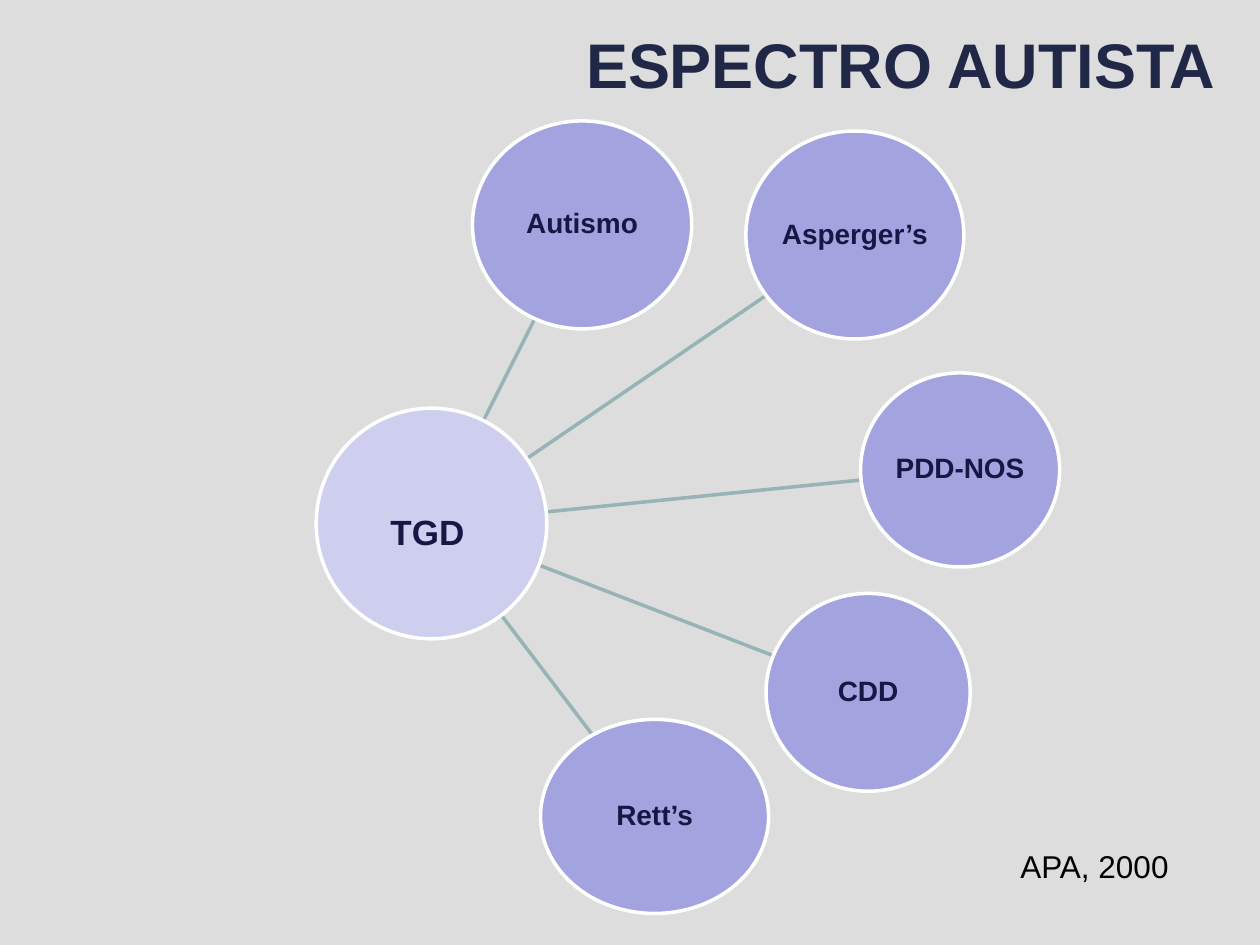
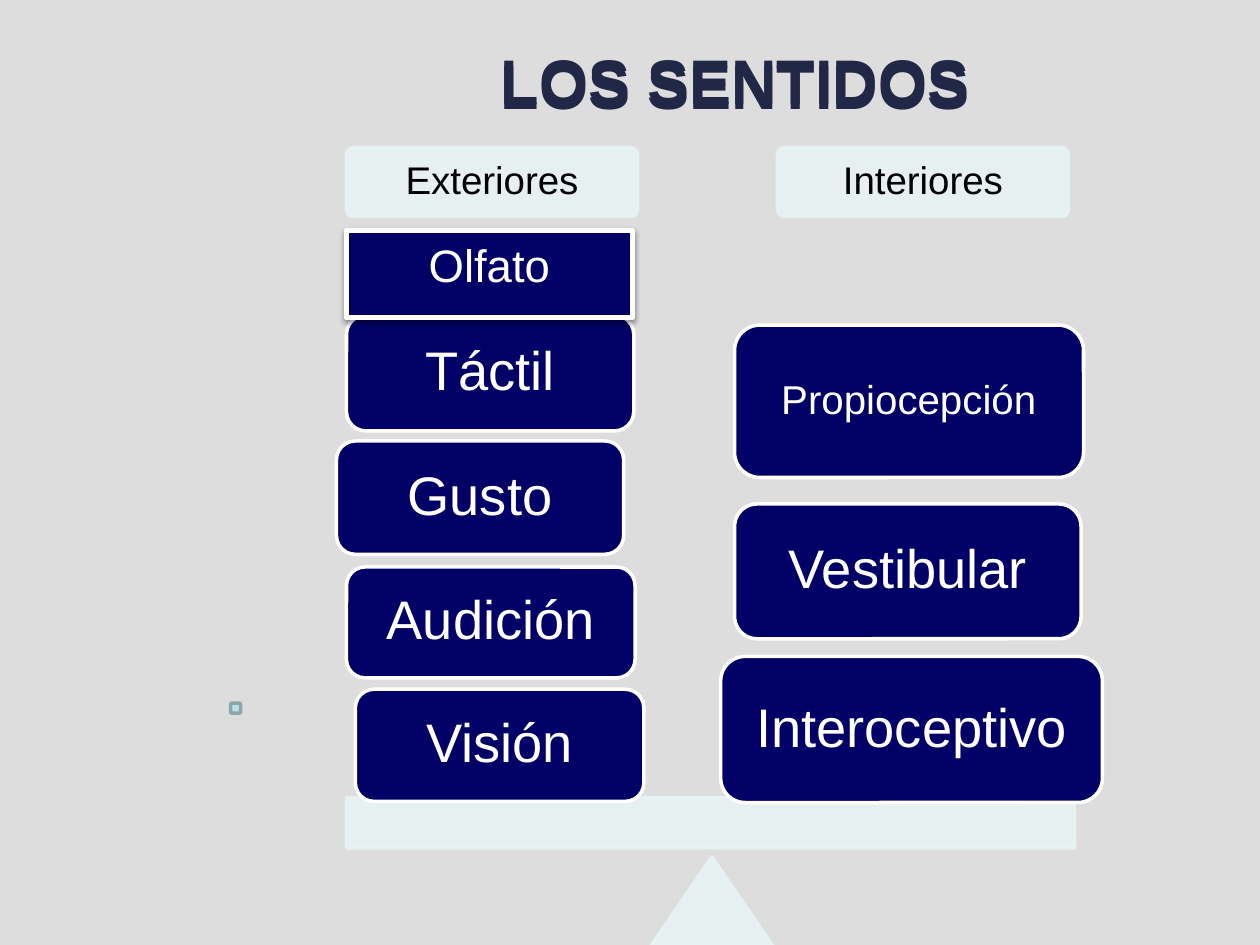
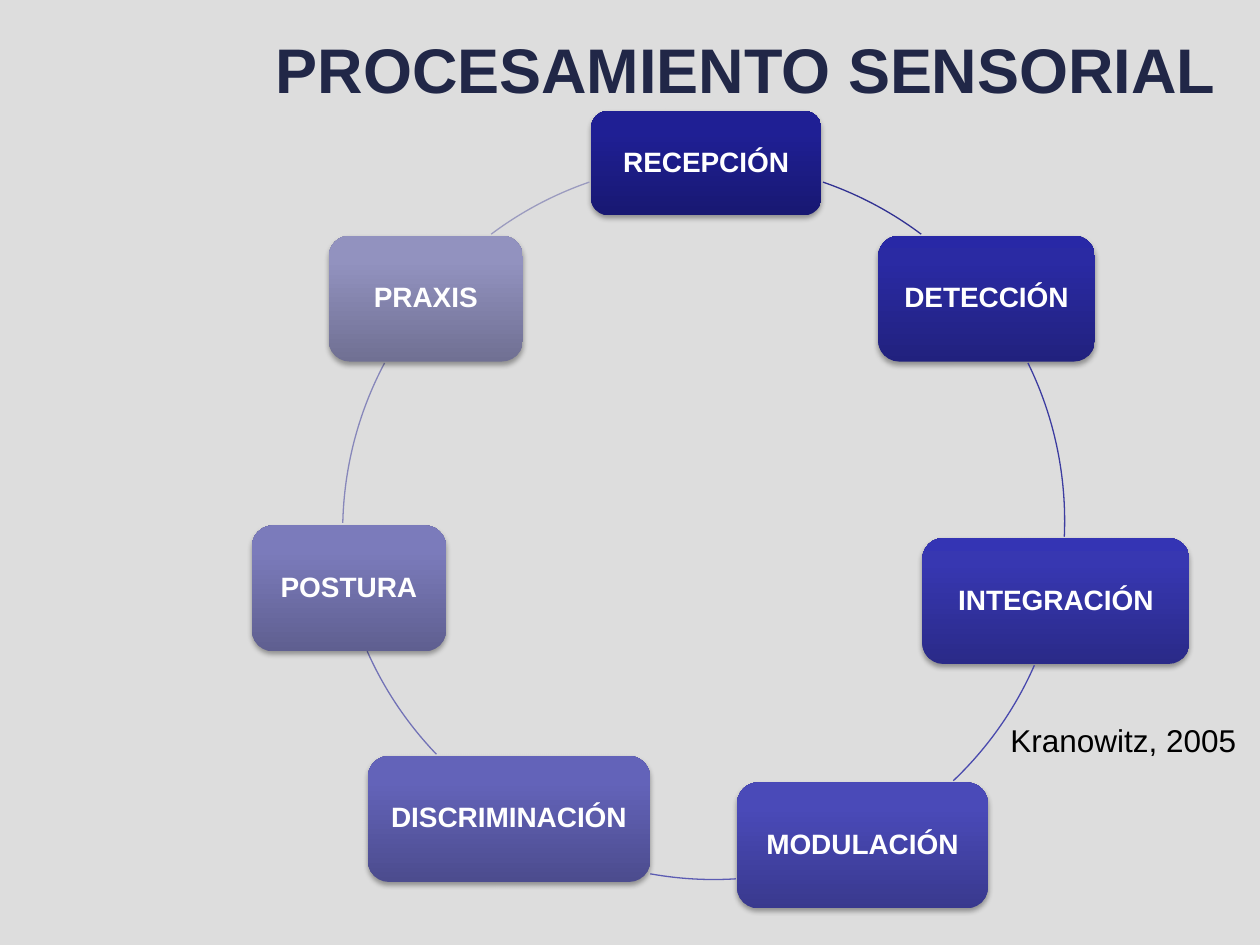
from math import atan2, degrees, hypot

from pptx import Presentation
from pptx.dml.color import RGBColor
from pptx.enum.shapes import MSO_CONNECTOR, MSO_SHAPE
from pptx.enum.text import MSO_ANCHOR, PP_ALIGN
from pptx.oxml import parse_xml
from pptx.oxml.ns import nsdecls
from pptx.util import Inches, Pt

OVAL, RECT, ROUND = MSO_SHAPE.OVAL, MSO_SHAPE.RECTANGLE, MSO_SHAPE.ROUNDED_RECTANGLE
TRIANGLE, ARC = MSO_SHAPE.ISOSCELES_TRIANGLE, MSO_SHAPE.ARC
LEFT, CENTER, RIGHT = PP_ALIGN.LEFT, PP_ALIGN.CENTER, PP_ALIGN.RIGHT
TOP, MIDDLE = MSO_ANCHOR.TOP, MSO_ANCHOR.MIDDLE

FONT = "Arial"
COLORS = {
    "ground": "DDDDDD", "title": "212747", "black": "000000", "white": "FFFFFF",
    "label": "171745", "hub": "CECEEF", "node": "A3A3E0", "spoke": "96B3B6",
    "pale": "E7F3F4", "navy": "000066", "dot": "BBE0E3", "dot_edge": "8AA6A8",
}

# Slide 1: (label, left, top, width, height)
HUB = (2.51, 3.24, 1.83, 1.83)
SPECTRUM = [
    ("Autismo", 3.75, 0.96, 1.74, 1.65),
    ("Asperger’s", 5.92, 1.04, 1.73, 1.65),
    ("PDD-NOS", 6.83, 2.96, 1.58, 1.54),
    ("CDD", 6.08, 4.71, 1.62, 1.57),
    ("Rett’s", 4.29, 5.71, 1.81, 1.54),
]

# Slide 2: headings, then (label, left, top, width, height, size)
HEADINGS = [("Exteriores", 2.75), ("Interiores", 6.17)]
SENSES = [
    ("Visión", 2.82, 5.47, 2.29, 0.89, 31),
    ("Audición", 2.75, 4.5, 2.29, 0.88, 31),
    ("Gusto", 2.67, 3.5, 2.28, 0.9, 31),
    ("Táctil", 2.75, 2.5, 2.28, 0.92, 31),
    ("Interoceptivo", 5.72, 5.21, 3.03, 1.16, 31),
    ("Vestibular", 5.83, 4, 2.75, 1.07, 31),
    ("Propiocepción", 5.83, 2.58, 2.77, 1.21, 23),
]

# Slide 3: (label, box, gradient from bottom to top)
STAGES = [
    ("RECEPCIÓN", (4.69, 0.88, 1.83, 0.83), ("181872", "1F1F94", "1D1D97")),
    ("DETECCIÓN", (6.97, 1.87, 1.72, 1), ("21217E", "2A2AA3", "2828A6")),
    ("INTEGRACIÓN", (7.32, 4.27, 2.12, 1), ("2A2A88", "3737B1", "3434B4")),
    ("MODULACIÓN", (5.85, 6.21, 1.99, 1), ("39398E", "4A4AB8", "4848BB")),
    ("DISCRIMINACIÓN", (2.92, 6, 2.24, 1), ("4C4C8E", "6363B9", "6262BB")),
    ("POSTURA", (2, 4.17, 1.54, 1), ("5F5F90", "7B7BBB", "7B7BBD")),
    ("PRAXIS", (2.61, 1.87, 1.54, 1), ("707093", "9292BF", "9191C0")),
]
RING = 5.69
# (left and top of the ring, start point, end point, colour), clockwise
ARCS = [
    ((2.76, 1.29), (6.53, 1.45), (7.31, 1.86), "313192"),
    ((2.76, 1.29), (8.16, 2.88), (8.45, 4.26), "3C3CA0"),
    ((2.76, 1.29), (8.21, 5.28), (7.57, 6.2), "4949AD"),
    ((2.82, 1.29), (5.84, 6.98), (5.16, 6.94), "5C5CB3"),
    ((2.67, 1.17), (3.46, 5.99), (2.91, 5.17), "7272B6"),
    ((2.72, 1.37), (2.72, 4.15), (3.05, 2.88), "8787BA"),
    ((2.76, 1.29), (3.9, 1.86), (4.68, 1.45), "9B9BBF"),
]


def rgb(name):
    return RGBColor.from_string(COLORS.get(name, name))


def write(shape, text, size, color, bold=False, align=CENTER, anchor=MIDDLE,
          inset=None, spacing=None):
    frame = shape.text_frame
    frame.word_wrap = True
    frame.vertical_anchor = anchor
    if inset is not None:
        frame.margin_left = frame.margin_right = Inches(inset)
        frame.margin_top = frame.margin_bottom = Inches(inset)
    para = frame.paragraphs[0]
    para.alignment = align
    if spacing:
        para.line_spacing = spacing
    span = para.add_run()
    span.text = text
    span.font.name, span.font.size, span.font.bold = FONT, Pt(size), bold
    span.font.color.rgb = rgb(color)


def add_text(page, box, text, size, color, **style):
    shape = page.shapes.add_textbox(*map(Inches, box))
    write(shape, text, size, color, **style)


def add_title(page, text, height, align=RIGHT):
    add_text(page, (1.92, 0.17, 7.83, height), text, 36, "title", bold=True, align=align)


def add_block(page, kind, box, fill=None, line=None, width=2):
    shape = page.shapes.add_shape(kind, *map(Inches, box))
    shape.shadow.inherit = False
    if fill:
        shape.fill.solid()
        shape.fill.fore_color.rgb = rgb(fill)
    else:
        shape.fill.background()
    if line:
        shape.line.color.rgb = rgb(line)
        shape.line.width = Pt(width)
    else:
        shape.line.fill.background()
    return shape


def add_pale(page, kind, box):
    shape = add_block(page, kind, box, "pale", "pale")
    for color in shape.element.spPr.xpath(".//a:srgbClr"):
        color.append(parse_xml(f'<a:alpha {nsdecls("a")} val="90000"/>'))
    return shape


def add_shadow(shape, alpha, distance):
    effects = shape.element.spPr.xpath("a:effectLst")[0]
    effects.append(parse_xml(
        f'<a:outerShdw {nsdecls("a")} blurRad="{Pt(3.1)}" dist="{Pt(distance)}" '
        f'dir="5400000" rotWithShape="0"><a:srgbClr val="{COLORS["black"]}">'
        f'<a:alpha val="{alpha * 1000}"/></a:srgbClr></a:outerShdw>'))


def set_gradient(shape, colors):
    stops = "".join(f'<a:gs pos="{share * 1000}"><a:srgbClr val="{color}"/></a:gs>'
                    for share, color in zip((0, 80, 100), colors))
    properties = shape.element.spPr
    properties.replace(properties.xpath("a:noFill")[0], parse_xml(
        f'<a:gradFill {nsdecls("a")} rotWithShape="1"><a:gsLst>{stops}</a:gsLst>'
        '<a:lin ang="16200000" scaled="0"/></a:gradFill>'))


def center(box):
    left, top, width, height = box
    return left + width / 2, top + height / 2


def edge_point(box, target, share=1):
    """Point on the ellipse in the box, facing the target."""
    x, y = center(box)
    dx, dy = target[0] - x, target[1] - y
    scale = share / hypot(dx / (box[2] / 2), dy / (box[3] / 2))
    return x + dx * scale, y + dy * scale


def add_spoke(page, box):
    start, end = edge_point(HUB, center(box), 0.75), edge_point(box, center(HUB))
    spoke = page.shapes.add_connector(MSO_CONNECTOR.STRAIGHT, *map(Inches, start + end))
    spoke.line.color.rgb = rgb("spoke")
    spoke.line.width = Pt(2)
    spoke.element.spPr.append(parse_xml(f'<a:effectLst {nsdecls("a")}/>'))


def add_arc(page, corner, start, end, color):
    box = (*corner, RING, RING)
    arc = add_block(page, ARC, box, line=color, width=0.75)
    x, y = center(box)
    for index, point in enumerate((start, end)):
        angle = degrees(atan2(point[1] - y, point[0] - x)) % 360
        arc.adjustments[index] = angle * 0.6  # 60000 units per degree


def add_page(deck):
    page = deck.slides.add_slide(deck.slide_layouts[6])
    page.background.fill.solid()
    page.background.fill.fore_color.rgb = rgb("ground")
    return page


def build_spectrum(page):
    add_title(page, "ESPECTRO AUTISTA", 0.67)
    for _, *box in SPECTRUM:
        add_spoke(page, box)
    add_block(page, OVAL, HUB, "hub", "white")
    for label, *box in SPECTRUM:
        node = add_block(page, OVAL, box, "node", "white")
        write(node, label, 16, "label", bold=True, inset=0.01, spacing=0.9)
    add_text(page, (3, 4, 0.92, 0.44), "TGD", 20, "label", bold=True, align=LEFT, anchor=TOP)
    add_text(page, (8, 6.67, 1.67, 0.4), "APA, 2000", 18, "black", align=LEFT, anchor=TOP)


def build_senses(page):
    add_title(page, "LOS SENTIDOS", 1, CENTER)
    for label, left in HEADINGS:
        heading = add_pale(page, ROUND, (left, 1.17, 2.31, 0.55))
        heading.adjustments[0] = 0.1
        write(heading, label, 22, "black", inset=0.09, spacing=0.9)
    # Scale: pivot and beam
    add_pale(page, TRIANGLE, (5.17, 6.8, 0.96, 0.7))
    add_pale(page, RECT, (2.75, 6.33, 5.78, 0.4))
    for label, *box, size in SENSES:
        sense = add_block(page, ROUND, box, "navy", "white")
        write(sense, label, size, "white", inset=0.13 if size > 30 else 0.1, spacing=0.9)
    add_title(page, "LOS SENTIDOS", 0.92, CENTER)
    smell = add_block(page, RECT, (2.75, 1.83, 2.27, 0.69), "navy", "white", 3)
    add_shadow(smell, 38, 1.6)
    write(smell, "Olfato", 26, "white", anchor=TOP)
    add_block(page, ROUND, (1.83, 5.58, 0.08, 0.08), "dot", "dot_edge")


def build_processing(page):
    add_title(page, "PROCESAMIENTO SENSORIAL", 0.75)
    for (label, box, colors), arc in zip(STAGES, ARCS):
        stage = add_block(page, ROUND, box)
        set_gradient(stage, colors)
        add_shadow(stage, 35, 1.8)
        write(stage, label, 16, "white", bold=True, inset=0.07, spacing=0.9)
        add_arc(page, *arc)
    add_text(page, (7.92, 5.67, 2.08, 0.4), "Kranowitz, 2005", 18, "black",
             align=LEFT, anchor=TOP)


def main():
    deck = Presentation()
    deck.slide_width, deck.slide_height = Inches(10), Inches(7.5)
    for build in (build_spectrum, build_senses, build_processing):
        build(add_page(deck))
    deck.save("out.pptx")


if __name__ == "__main__":
    main()
